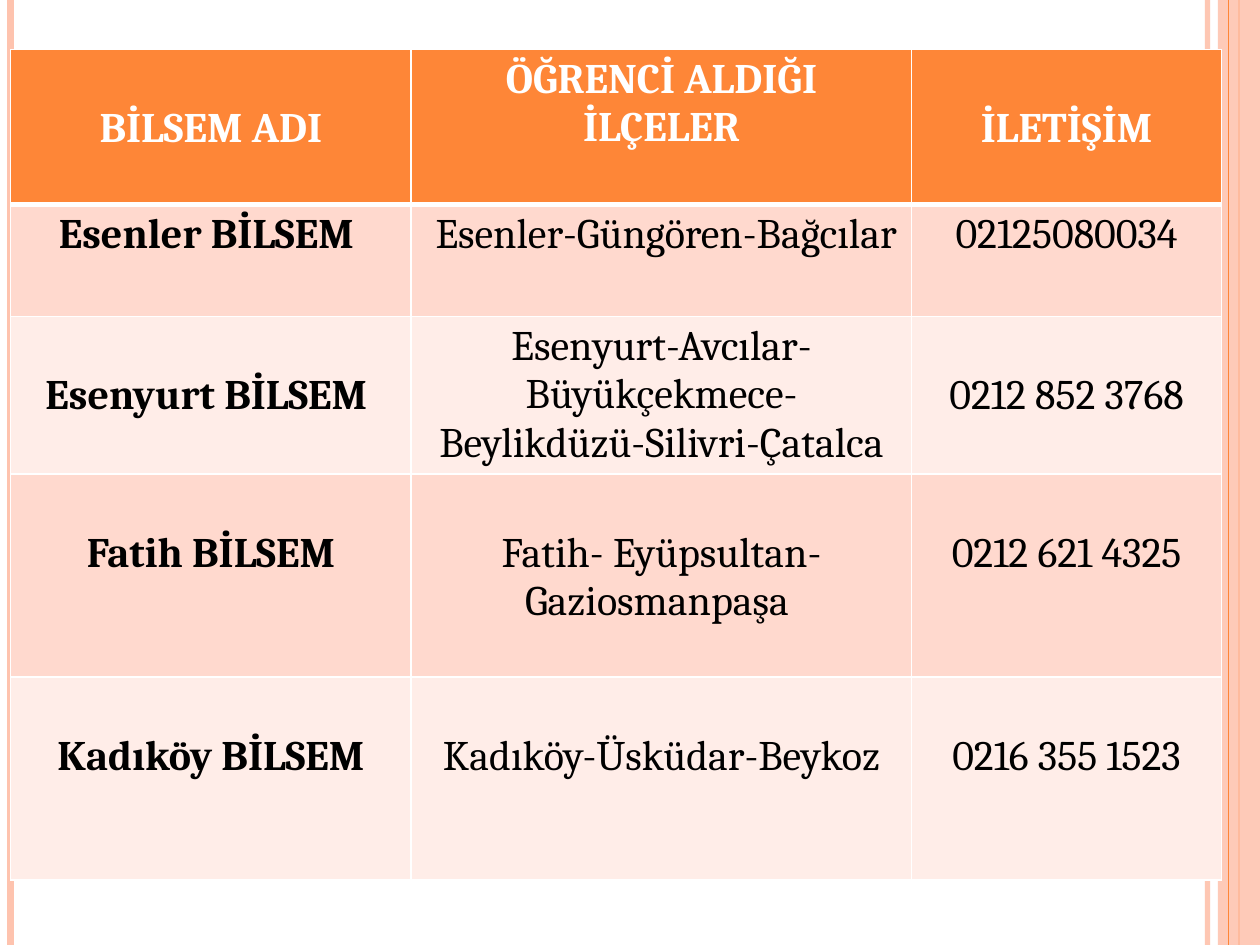
from lxml import etree
from pptx import Presentation
from pptx.dml.color import RGBColor
from pptx.enum.shapes import MSO_CONNECTOR, MSO_SHAPE
from pptx.enum.text import PP_ALIGN
from pptx.oxml.ns import qn
from pptx.util import Pt

STRAIGHT = MSO_CONNECTOR.STRAIGHT
RECTANGLE = MSO_SHAPE.RECTANGLE
CENTER = PP_ALIGN.CENTER

WIDTH, HEIGHT = 720, 540
FONT, SIZE, LINE_HEIGHT = "Cambria", 24, 28
MARGIN = 3.6
COLORS = {
    "orange": "FE8637",
    "peach": "FEC3AE",
    "band_dark": "FFD9CE",
    "band_light": "FFEDE8",
    "white": "FFFFFF",
    "black": "000000",
}

COLUMNS = [229, 286, 177]
ROW_HEIGHTS = [88.6, 64, 90, 116, 116]
ROWS = [
    ["BİLSEM ADI", "ÖĞRENCİ ALDIĞI İLÇELER", "İLETİŞİM"],
    ["Esenler BİLSEM ", " Esenler-Güngören-Bağcılar", "02125080034"],
    ["Esenyurt BİLSEM ",
     "Esenyurt-Avcılar-Büyükçekmece-Beylikdüzü-Silivri-Çatalca",
     "0212 852 3768"],
    ["Fatih BİLSEM", "Fatih- Eyüpsultan-Gaziosmanpaşa ", "0212 621 4325"],
    ["Kadıköy BİLSEM", "Kadıköy-Üsküdar-Beykoz", "0216 355 1523"],
]
# Cells whose text starts on the first line; the others start one line lower
TOP_CELLS = {(0, 1), (1, 0), (1, 1), (1, 2), (2, 1)}


def rgb(name):
    return RGBColor.from_string(COLORS[name])


def set_alpha(fill_xml, percent):
    color = fill_xml.find(".//" + qn("a:srgbClr"))
    etree.SubElement(color, qn("a:alpha"), val=str(percent * 1000))


def write(tf, text, *, color="black", bold=False, align=CENTER):
    p = tf.paragraphs[0]
    p.alignment = align
    r = p.add_run()
    r.text = text
    r.font.name = FONT
    r.font.size = Pt(SIZE)
    r.font.bold = bold
    r.font.color.rgb = rgb(color)


def set_borders(cell, **widths):
    """Draw white cell borders; this must come before the cell's fill."""
    tc_pr = cell._tc.get_or_add_tcPr()
    for side, width in widths.items():
        ln = etree.SubElement(tc_pr, qn("a:ln" + side), w=str(Pt(width)))
        fill = etree.SubElement(ln, qn("a:solidFill"))
        etree.SubElement(fill, qn("a:srgbClr"), val=COLORS["white"])


class SlideBuilder:
    def __init__(self, s):
        self.s = s

    def vertical_line(self, x, color, width, alpha=None):
        line = self.s.shapes.add_connector(STRAIGHT, Pt(x), 0, Pt(x), Pt(HEIGHT))
        line.line.color.rgb = rgb(color)
        line.line.width = Pt(width)
        sp_pr = line._element.spPr
        if alpha:
            set_alpha(sp_pr, alpha)
        etree.SubElement(sp_pr, qn("a:effectLst"))

    def band(self, x, width, color, alpha):
        sp = self.s.shapes.add_shape(RECTANGLE, Pt(x), 0, Pt(width), Pt(HEIGHT))
        sp.shadow.inherit = False
        sp.fill.solid()
        sp.fill.fore_color.rgb = rgb(color)
        set_alpha(sp._element.spPr, alpha)
        sp.line.fill.background()

    def table(self, x, y):
        table = self.s.shapes.add_table(
            len(ROWS), len(COLUMNS), Pt(x), Pt(y),
            Pt(sum(COLUMNS)), Pt(sum(ROW_HEIGHTS))).table
        for column, width in zip(table.columns, COLUMNS):
            column.width = Pt(width)
        for i, (row, height) in enumerate(zip(table.rows, ROW_HEIGHTS)):
            row.height = Pt(height)
            for j, cell in enumerate(row.cells):
                self.cell(cell, i, j)

    def cell(self, cell, i, j):
        header = i == 0
        cell.margin_top = Pt(MARGIN if (i, j) in TOP_CELLS else MARGIN + LINE_HEIGHT)
        set_borders(cell, L=1, R=1, T=3 if i == 1 else 1, B=3 if header else 1)
        cell.fill.solid()
        band = "band_dark" if i % 2 else "band_light"
        cell.fill.fore_color.rgb = rgb("orange" if header else band)
        write(cell.text_frame, ROWS[i][j], bold=header or j == 0,
              color="white" if header else "black")


def main():
    prs = Presentation()
    prs.slide_width, prs.slide_height = Pt(WIDTH), Pt(HEIGHT)
    builder = SlideBuilder(prs.slides.add_slide(prs.slide_layouts[6]))
    builder.vertical_line(690, "peach", 3, alpha=93)
    builder.vertical_line(6, "peach", 4.5)
    builder.vertical_line(708, "orange", 1.5)
    builder.band(696, 24, "peach", alpha=87)
    builder.vertical_line(702, "orange", 0.75)
    builder.table(6, 28.3)
    prs.save("out.pptx")


if __name__ == "__main__":
    main()
